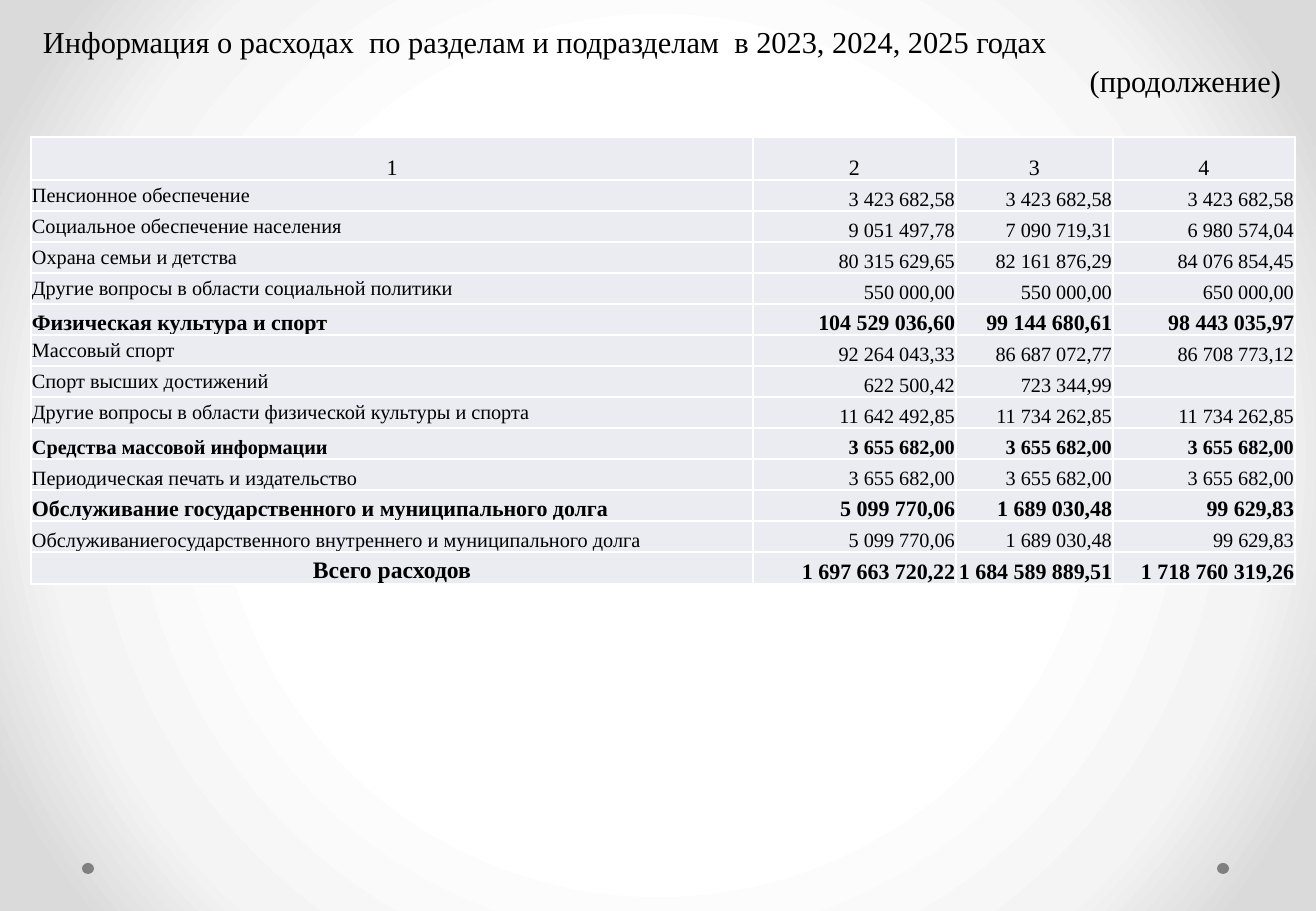
from pptx import Presentation
from pptx.dml.color import RGBColor
from pptx.enum.shapes import MSO_SHAPE
from pptx.enum.text import MSO_ANCHOR, PP_ALIGN
from pptx.oxml import parse_xml
from pptx.oxml.ns import nsdecls
from pptx.util import Pt

COLORS = {
    "text": "000000",
    "cell": "EAECF2",
    "border": "FFFFFF",
    "dot": "808080",
}
BACKGROUND_STOPS = [(50, "FFFFFF"), (76, "F4F4F4"), (92, "DADADA")]
COLUMN_WIDTHS = [722, 203, 157, 182]
ROW_HEIGHTS = [43] + [31] * 12 + [32]

TOP, MIDDLE, BOTTOM = MSO_ANCHOR.TOP, MSO_ANCHOR.MIDDLE, MSO_ANCHOR.BOTTOM
LEFT, CENTER, RIGHT = PP_ALIGN.LEFT, PP_ALIGN.CENTER, PP_ALIGN.RIGHT

# Row style: label size, number size, bold, label anchor, label and number alignment
HEADER = (13, 13, False, BOTTOM, CENTER, CENTER)
ITEM = (12, 12, False, MIDDLE, LEFT, RIGHT)
LOW_ITEM = (12, 12, False, BOTTOM, LEFT, RIGHT)
SECTION = (13, 13, True, BOTTOM, LEFT, RIGHT)
SMALL_SECTION = (12, 12, True, BOTTOM, LEFT, RIGHT)
TOTAL = (14, 13, True, BOTTOM, CENTER, RIGHT)

EXPENSES = [
    (HEADER, "1", "2", "3", "4"),
    (ITEM, "Пенсионное обеспечение", "3 423 682,58", "3 423 682,58", "3 423 682,58"),
    (ITEM, "Социальное обеспечение населения", "9 051 497,78", "7 090 719,31", "6 980 574,04"),
    (ITEM, "Охрана семьи и детства", "80 315 629,65", "82 161 876,29", "84 076 854,45"),
    (ITEM, "Другие вопросы в области социальной политики", "550 000,00", "550 000,00", "650 000,00"),
    (SECTION, "Физическая культура и спорт", "104 529 036,60", "99 144 680,61", "98 443 035,97"),
    (ITEM, "Массовый спорт", "92 264 043,33", "86 687 072,77", "86 708 773,12"),
    (ITEM, "Спорт высших достижений", "622 500,42", "723 344,99", ""),
    (ITEM, "Другие вопросы в области физической культуры и спорта",
     "11 642 492,85", "11 734 262,85", "11 734 262,85"),
    (SMALL_SECTION, "Средства массовой информации", "3 655 682,00", "3 655 682,00", "3 655 682,00"),
    (LOW_ITEM, "Периодическая печать и издательство", "3 655 682,00", "3 655 682,00", "3 655 682,00"),
    (SECTION, "Обслуживание государственного и муниципального долга",
     "5 099 770,06", "1 689 030,48", "99 629,83"),
    (LOW_ITEM, "Обслуживаниегосударственного внутреннего и муниципального долга",
     "5 099 770,06", "1 689 030,48", "99 629,83"),
    (TOTAL, "Всего расходов", "1 697 663 720,22", "1 684 589 889,51", "1 718 760 319,26"),
]


def px(length):
    return round(length * 914400 / 121.5)


class SlideBuilder:
    font_name = "Times New Roman"

    def __init__(self, presentation):
        self.slide = presentation.slides.add_slide(presentation.slide_layouts[6])

    def background(self, stops):
        """Fill the slide with a gradient that spreads in circles from its centre."""
        stop_xml = "".join(
            f'<a:gs pos="{position * 1000}"><a:srgbClr val="{color}"/></a:gs>'
            for position, color in stops
        )
        self.slide.element.cSld.insert(0, parse_xml(
            f'<p:bg {nsdecls("p", "a")}><p:bgPr><a:gradFill rotWithShape="1">'
            f'<a:gsLst>{stop_xml}</a:gsLst><a:path path="circle">'
            '<a:fillToRect l="50000" t="50000" r="50000" b="50000"/></a:path>'
            '</a:gradFill><a:effectLst/></p:bgPr></p:bg>'
        ))

    def dot(self, left, top, width, height):
        shape = self.slide.shapes.add_shape(
            MSO_SHAPE.OVAL, px(left), px(top), px(width), px(height))
        shape.shadow.inherit = False
        shape.fill.solid()
        shape.fill.fore_color.rgb = RGBColor.from_string(COLORS["dot"])
        shape.line.fill.background()

    def style(self, paragraph, size, alignment, bold=False):
        paragraph.alignment = alignment
        font = paragraph.font
        font.name, font.size, font.bold = self.font_name, Pt(size), bold
        font.color.rgb = RGBColor.from_string(COLORS["text"])

    def text(self, left, top, width, height, lines, size):
        """Add a text box with one paragraph for each (text, alignment) pair."""
        frame = self.slide.shapes.add_textbox(
            px(left), px(top), px(width), px(height)).text_frame
        frame.word_wrap = True
        frame.vertical_anchor = TOP
        frame.text = "\n".join(text for text, _ in lines)
        for paragraph, (_, alignment) in zip(frame.paragraphs, lines):
            self.style(paragraph, size, alignment)
            paragraph.line_spacing = 1.07

    def table(self, left, top, widths, heights, rows):
        table = self.slide.shapes.add_table(
            len(rows), len(widths), px(left), px(top),
            px(sum(widths)), px(sum(heights))).table
        table.first_row = table.horz_banding = False
        for column, width in zip(table.columns, widths):
            column.width = px(width)
        for row, height, (row_style, *texts) in zip(table.rows, heights, rows):
            row.height = px(height)
            label_size, number_size, bold, anchor, label_align, number_align = row_style
            for index, (cell, text) in enumerate(zip(row.cells, texts)):
                if index == 0:
                    self.cell(cell, text, label_size, label_align, bold, anchor)
                else:
                    self.cell(cell, text, number_size, number_align, bold, BOTTOM)

    def cell(self, cell, text, size, alignment, bold, anchor):
        cell.text = text
        cell.vertical_anchor = anchor
        cell.margin_left = cell.margin_right = cell.margin_top = px(1)
        cell.margin_bottom = 0
        paragraph = cell.text_frame.paragraphs[0]
        self.style(paragraph, size, alignment, bold)
        if not text:
            # An empty cell takes its height from the end-of-paragraph size
            paragraph._p.append(parse_xml(
                f'<a:endParaRPr {nsdecls("a")} sz="{size * 100}"/>'))
        cell.fill.solid()
        cell.fill.fore_color.rgb = RGBColor.from_string(COLORS["cell"])
        properties = cell._tc.get_or_add_tcPr()
        for position, side in enumerate("LRTB"):
            properties.insert(position, parse_xml(
                f'<a:ln{side} {nsdecls("a")} w="{Pt(1)}"><a:solidFill>'
                f'<a:srgbClr val="{COLORS["border"]}"/></a:solidFill></a:ln{side}>'))


def main():
    presentation = Presentation()
    presentation.slide_width, presentation.slide_height = px(1316), px(911)
    builder = SlideBuilder(presentation)
    builder.background(BACKGROUND_STOPS)
    for left in (1217, 82):
        builder.dot(left, 863, 12, 11)
    builder.text(31, 15, 1262, 123, [
        ("Информация о расходах  по разделам и подразделам  в 2023, 2024, 2025 годах", LEFT),
        ("(продолжение)", RIGHT),
    ], 18)
    builder.table(31, 137, COLUMN_WIDTHS, ROW_HEIGHTS, EXPENSES)
    presentation.save("out.pptx")


if __name__ == "__main__":
    main()
